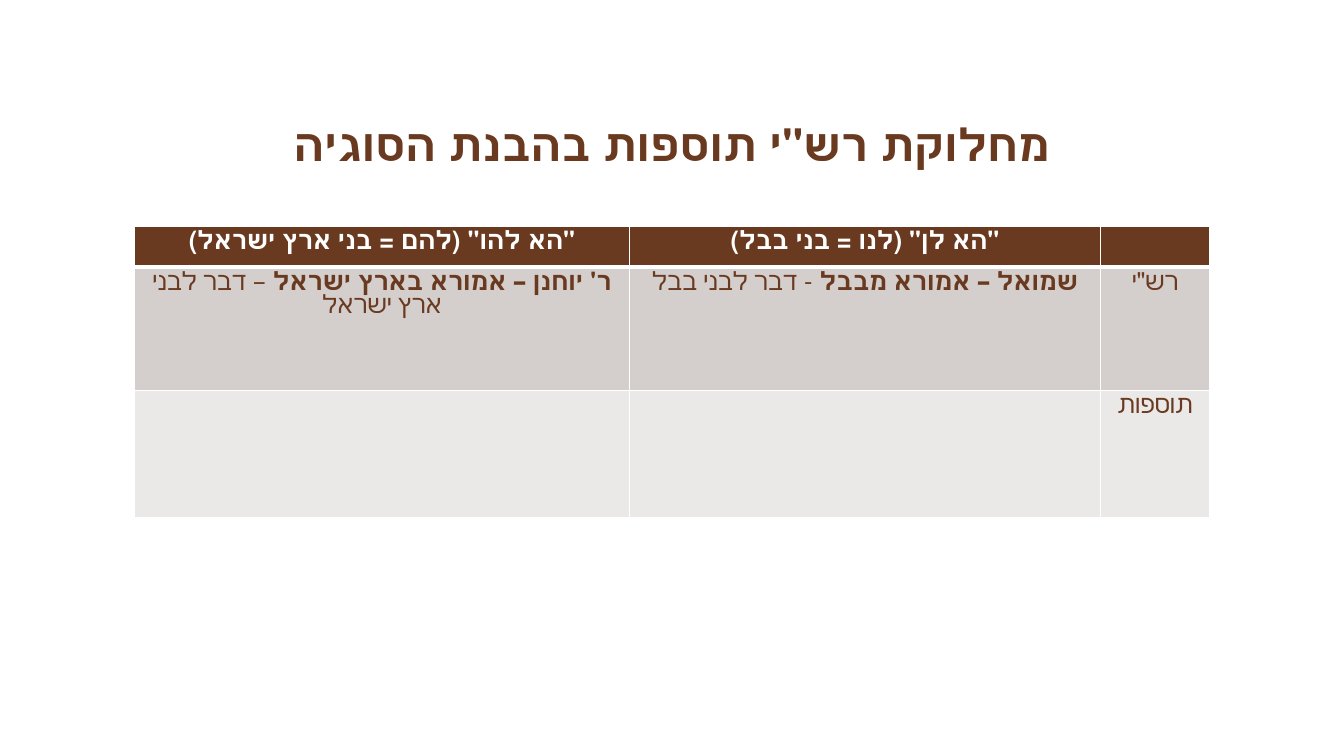
import pptx
import pptx.dml.color
import pptx.enum.text
import pptx.oxml
import pptx.oxml.ns
import pptx.util

WIDTH, HEIGHT = 13.33, 7.5
FONT = "Cambria"
BROWN, WHITE = "6A3A20", "FFFFFF"
ROW_FILLS = [BROWN, "D4CECD", "EBE8E8"]
COLUMN_WIDTHS = [4.91, 4.67, 1.08]
ROW_HEIGHTS = [0.4, 1.22, 1.26]

# Each cell is a list of (text, bold) runs.
ROWS = [
    [[('"הא להו" (להם = בני ארץ ישראל)', True)],
     [('"הא לן" (לנו = בני בבל)', True)],
     []],
    [[("ר' יוחנן – אמורא בארץ ישראל ", True), ("– דבר לבני ארץ ישראל", False)],
     [("שמואל – אמורא מבבל ", True), ("- דבר לבני בבל", False)],
     [('רש"י', False)]],
    [[], [], [("תוספות", False)]],
]


def color(hex_code):
    return pptx.dml.color.RGBColor.from_string(hex_code)


def write_rtl(para, runs, size, hex_code, spacing):
    """Fill a centred right-to-left paragraph with (text, bold) runs."""
    para.alignment = pptx.enum.text.PP_ALIGN.CENTER
    para.line_spacing = spacing
    para._p.get_or_add_pPr().set("rtl", "1")
    for text, bold in runs:
        span = para.add_run()
        span.text = text
        span.font.size = pptx.util.Pt(size)
        span.font.bold = bold
        span.font.name = FONT
        span.font.color.rgb = color(hex_code)


def add_borders(cell, bottom, top):
    properties = cell._tc.get_or_add_tcPr()
    widths = {"lnL": 1, "lnR": 1, "lnT": top, "lnB": bottom}
    for index, (side, points) in enumerate(widths.items()):
        properties.insert(index, pptx.oxml.parse_xml(
            f'<a:{side} {pptx.oxml.ns.nsdecls("a")} w="{pptx.util.Pt(points)}">'
            f'<a:solidFill><a:srgbClr val="{WHITE}"/></a:solidFill></a:{side}>'))


def add_title(page, left, top, width, height):
    box = page.shapes.add_textbox(*map(pptx.util.Inches, (left, top, width, height)))
    frame = box.text_frame
    frame.word_wrap = True
    frame.vertical_anchor = pptx.enum.text.MSO_ANCHOR.BOTTOM
    write_rtl(frame.paragraphs[0],
              [('מחלוקת רש"י תוספות בהבנת הסוגיה', True)], 32, BROWN, 0.9)


def add_comparison(page, left, top, width, height):
    table = page.shapes.add_table(
        len(ROWS), len(COLUMN_WIDTHS),
        *map(pptx.util.Inches, (left, top, width, height))).table
    for column, share in zip(table.columns, COLUMN_WIDTHS):
        column.width = pptx.util.Inches(width * share / sum(COLUMN_WIDTHS))
    for row, share in zip(table.rows, ROW_HEIGHTS):
        row.height = pptx.util.Inches(height * share / sum(ROW_HEIGHTS))
    for row_index, cells in enumerate(ROWS):
        for column_index, runs in enumerate(cells):
            cell = table.cell(row_index, column_index)
            cell.fill.solid()
            cell.fill.fore_color.rgb = color(ROW_FILLS[row_index])
            add_borders(cell, bottom=3 if row_index == 0 else 1,
                        top=3 if row_index == 1 else 1)
            write_rtl(cell.text_frame.paragraphs[0], runs, 18,
                      WHITE if row_index == 0 else BROWN, 0.9)


def main():
    deck = pptx.Presentation()
    deck.slide_width = pptx.util.Inches(WIDTH)
    deck.slide_height = pptx.util.Inches(HEIGHT)
    page = deck.slides.add_slide(deck.slide_layouts[6])
    left, width = WIDTH * 0.1, WIDTH * 0.8
    add_title(page, left, 0.47, width, 1.28)
    add_comparison(page, left, 2.25, width, sum(ROW_HEIGHTS))
    deck.save("out.pptx")


if __name__ == "__main__":
    main()
